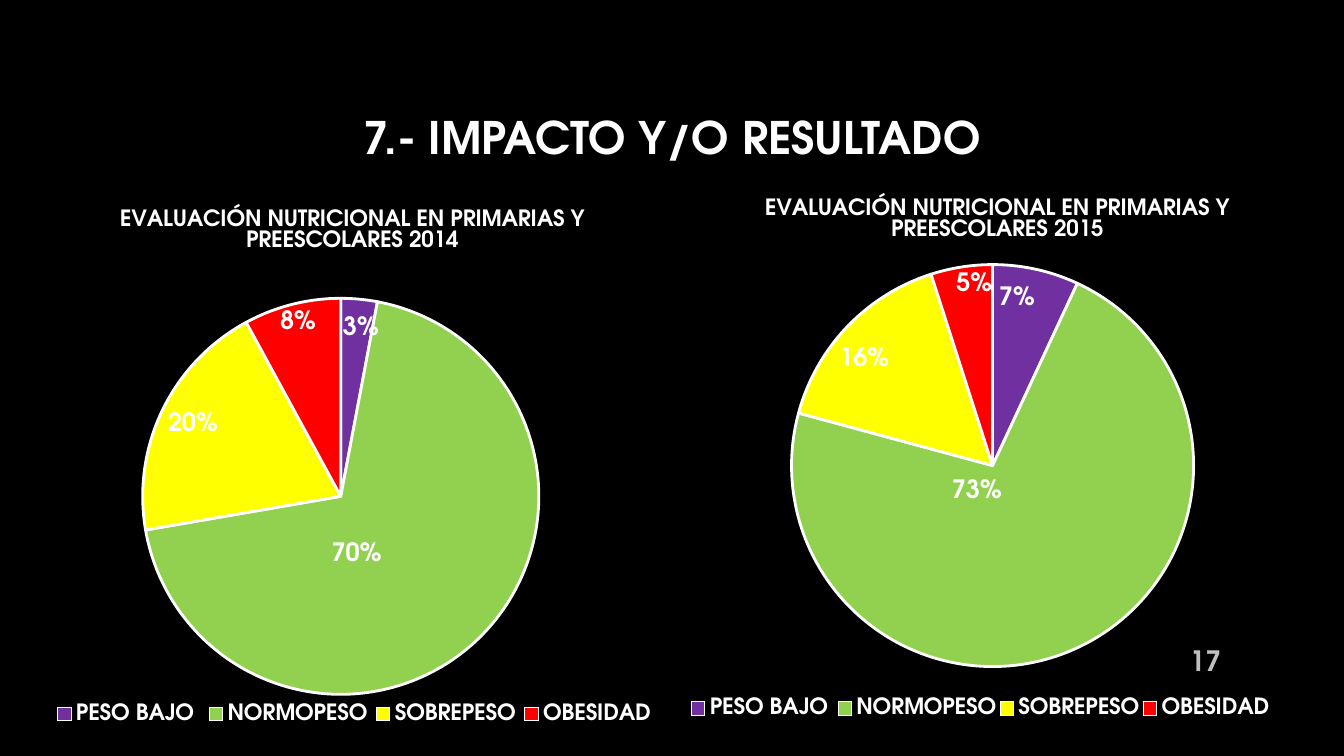
"""Build the slide comparing nutritional evaluations of 2014 and 2015 in two pie charts."""
import pptx
import pptx.chart.data
import pptx.dml.color
import pptx.enum.chart
import pptx.enum.text
import pptx.oxml
import pptx.oxml.ns
import pptx.util

PX = 9144
THEME = {
    "font": "TeX Gyre Adventor",
    "background": "000000",
    "text": "FFFFFF",
    "number": "BFBFBF",
    "slices": ["7030A0", "92D050", "FFFF00", "FF0000"],
    "title_size": 32,
    "number_size": 20,
    "label_size": 18,
    "chart_size": 16,
}
CATEGORIES = ["PESO BAJO ", "NORMOPESO", "SOBREPESO", "OBESIDAD"]
PERCENT_FORMAT = '0"%"'
CHARTS = [
    {
        "title": "EVALUACIÓN NUTRICIONAL EN PRIMARIAS Y PREESCOLARES 2015",
        "box": (682, 185, 605, 554),
        "values": [7, 73, 16, 5],
        "pie": {"x": 0.17, "y": 0.14, "w": 0.66, "h": 0.72},
        "title_at": {"x": 0.12, "y": 0.01},
        "legend_at": {"x": 0, "y": 0.9, "w": 0.96, "h": 0.07},
        "label_shifts": {
            0: {"x": 0, "y": 0.02},
            1: {"x": -0.12, "y": -0.25},
            2: {"x": -0.02, "y": 0.03},
            3: {"x": -0.01, "y": 0},
        },
    },
    {
        "title": "EVALUACIÓN NUTRICIONAL EN PRIMARIAS Y PREESCOLARES 2014",
        "box": (15, 185, 666, 554),
        "values": [3, 70, 20, 8],
        "pie": {"x": 0.19, "y": 0.2, "w": 0.59, "h": 0.71},
        "title_at": {"x": 0.15, "y": 0.03},
        "legend_at": {"x": 0.05, "y": 0.91, "w": 0.91, "h": 0.07},
        "label_shifts": {
            0: {"x": 0.03, "y": 0.02},
            1: {"x": -0.14, "y": -0.12},
            3: {"x": -0.02, "y": 0},
        },
    },
]
TEXTS = [
    ("7.- IMPACTO Y/O RESULTADO", (117, 53, 1100, 165), "title_size", "text", "CENTER"),
    ("17", (1161, 635, 60, 40), "number_size", "number", "RIGHT"),
]


def style_font(font, size, color="text"):
    font.name = THEME["font"]
    font.size = pptx.util.Pt(THEME[size])
    font.bold = True
    font.color.rgb = pptx.dml.color.RGBColor.from_string(THEME[color])


def set_layout(parent, index, position, absolute=True):
    for layout in parent.findall(pptx.oxml.ns.qn("c:layout")):
        parent.remove(layout)
    is_plot = parent.tag == pptx.oxml.ns.qn("c:plotArea")
    settings = '<c:layoutTarget val="inner"/>' if is_plot else ""
    if absolute:
        settings += '<c:xMode val="edge"/><c:yMode val="edge"/>'
    settings += "".join(f'<c:{key} val="{value}"/>' for key, value in position.items())
    parent.insert(index, pptx.oxml.parse_xml(
        f'<c:layout {pptx.oxml.ns.nsdecls("c")}>'
        f"<c:manualLayout>{settings}</c:manualLayout></c:layout>"
    ))


presentation = pptx.Presentation()
presentation.slide_width = 1333 * PX
presentation.slide_height = 750 * PX
slide = presentation.slides.add_slide(presentation.slide_layouts[6])
slide.background.fill.solid()
slide.background.fill.fore_color.rgb = pptx.dml.color.RGBColor.from_string(THEME["background"])

for entry in CHARTS:
    chart_data = pptx.chart.data.CategoryChartData()
    chart_data.categories = CATEGORIES
    chart_data.add_series("Series 1", entry["values"])
    chart = slide.shapes.add_chart(
        pptx.enum.chart.XL_CHART_TYPE.PIE, *(length * PX for length in entry["box"]), chart_data
    ).chart
    style_font(chart.font, "chart_size")

    chart.has_title = True
    title_frame = chart.chart_title.text_frame
    title_frame.text = entry["title"]
    style_font(title_frame.paragraphs[0].runs[0].font, "chart_size")

    chart.has_legend = True
    chart.legend.position = pptx.enum.chart.XL_LEGEND_POSITION.BOTTOM
    chart.legend.include_in_layout = False
    style_font(chart.legend.font, "chart_size")

    for tag, index, key in (("title", 1, "title_at"), ("plotArea", 0, "pie"), ("legend", 1, "legend_at")):
        set_layout(chart.element.xpath(f"c:chart/c:{tag}")[0], index, entry[key])

    plot = chart.plots[0]
    plot.vary_by_categories = True
    series = plot.series[0]
    labels = series.data_labels
    labels.show_value = True
    labels.number_format = PERCENT_FORMAT
    labels.number_format_is_linked = False
    labels.position = pptx.enum.chart.XL_LABEL_POSITION.INSIDE_END
    style_font(labels.font, "label_size")

    for index, color in enumerate(THEME["slices"]):
        slice_format = series.points[index].format
        slice_format.fill.solid()
        slice_format.fill.fore_color.rgb = pptx.dml.color.RGBColor.from_string(color)
        slice_format.line.color.rgb = pptx.dml.color.RGBColor.from_string(THEME["text"])
        slice_format.line.width = pptx.util.Pt(2)

    for index, shift in entry["label_shifts"].items():
        label = series.points[index].data_label
        label.position = pptx.enum.chart.XL_LABEL_POSITION.INSIDE_END
        style_font(label.font, "label_size")
        label_element = chart.element.xpath(f".//c:dLbl[c:idx/@val={index}]")[0]
        set_layout(label_element, 1, shift, absolute=False)
        number_format = pptx.oxml.parse_xml(f'<c:numFmt {pptx.oxml.ns.nsdecls("c")}/>')
        number_format.set("formatCode", PERCENT_FORMAT)
        number_format.set("sourceLinked", "0")
        label_element.insert(2, number_format)

for text, box, size, color, alignment in TEXTS:
    text_frame = slide.shapes.add_textbox(*(length * PX for length in box)).text_frame
    text_frame.word_wrap = True
    text_frame.vertical_anchor = pptx.enum.text.MSO_ANCHOR.MIDDLE
    text_frame.text = text
    paragraph = text_frame.paragraphs[0]
    paragraph.alignment = pptx.enum.text.PP_ALIGN[alignment]
    style_font(paragraph.runs[0].font, size, color)

presentation.save("out.pptx")
